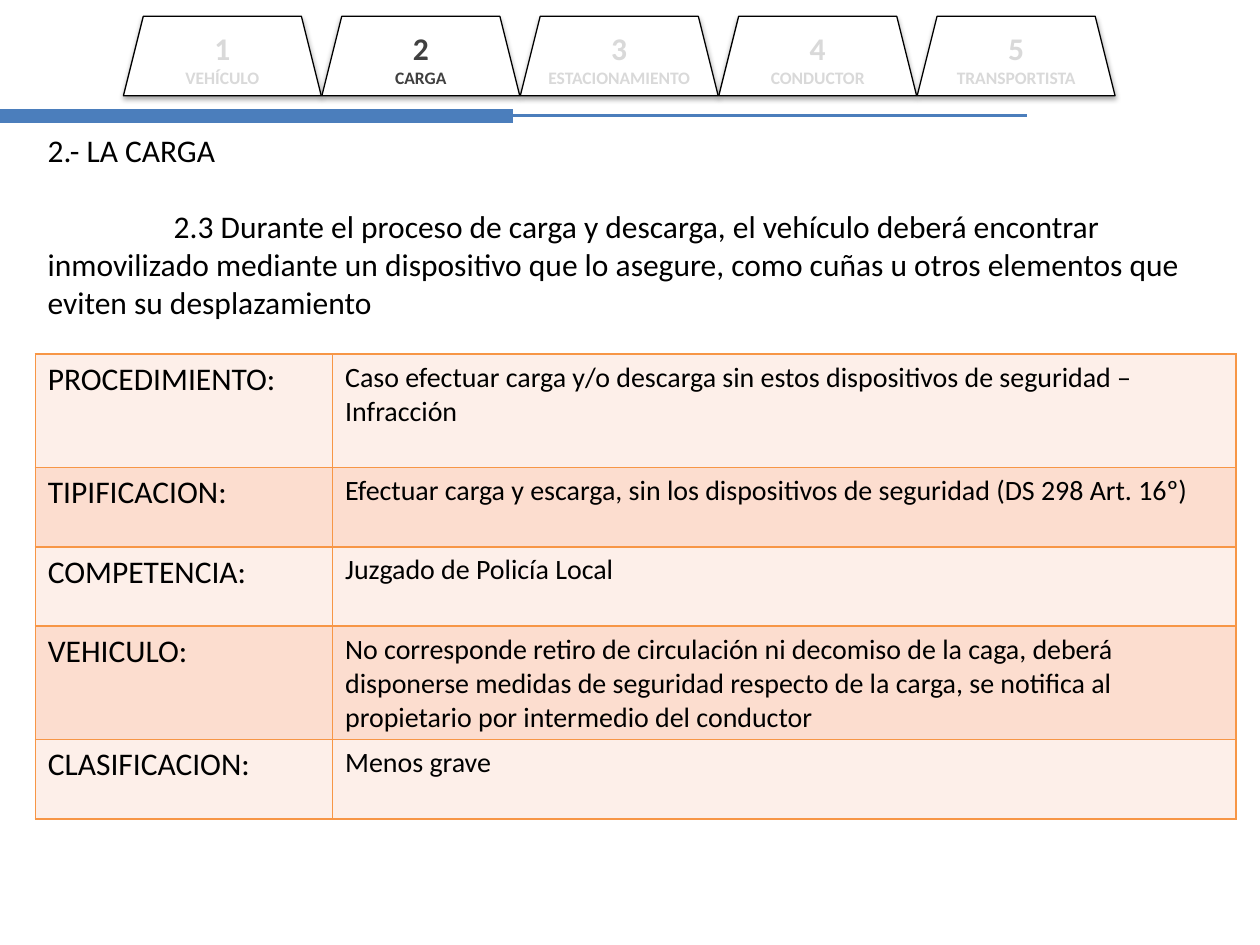
"""Build the slide on load immobilisation, with section tabs and a procedure table."""
from lxml import etree
from pptx import Presentation
from pptx.dml.color import RGBColor
from pptx.enum import shapes, text
from pptx.oxml import parse_xml
from pptx.oxml.ns import nsdecls, qn
from pptx.util import Inches, Pt

COLORS = {
    "black": "000000", "white": "FFFFFF", "blue": "4B7EBC", "orange": "F79646",
    "light": "FDEFE9", "dark": "FCDDCF", "active": "404040", "inactive": "D9D9D9",
}
TABS = ["VEHÍCULO", "CARGA", "ESTACIONAMIENTO", "CONDUCTOR", "TRANSPORTISTA"]
ACTIVE_TAB = 2
ROWS = [
    ("PROCEDIMIENTO:", "Caso efectuar carga y/o descarga sin estos dispositivos de seguridad – Infracción", 0.9),
    ("TIPIFICACION:", "Efectuar carga y escarga, sin los dispositivos de seguridad (DS 298 Art. 16º)", 0.63),
    ("COMPETENCIA:", "Juzgado de Policía Local", 0.63),
    ("VEHICULO:", "No corresponde retiro de circulación ni decomiso de la caga, deberá disponerse "
     "medidas de seguridad respecto de la carga, se notifica al propietario por intermedio "
     "del conductor", 0.9),
    ("CLASIFICACION:", "Menos grave", 0.63),
]


def color(name):
    return RGBColor.from_string(COLORS[name])


def format_runs(paragraph, size, name="black", bold=False):
    for run in paragraph.runs:
        run.font.name = "Calibri"
        run.font.size = Pt(size)
        run.font.bold = bold
        run.font.color.rgb = color(name)


presentation = Presentation()
presentation.slide_width = Inches(10)
presentation.slide_height = Inches(7.5)
slide = presentation.slides.add_slide(presentation.slide_layouts[6])

for end, width in [(8.15, 1.75), (4.07, 8)]:
    line = slide.shapes.add_connector(
        shapes.MSO_CONNECTOR.STRAIGHT, Inches(0), Inches(0.92), Inches(end), Inches(0.92))
    line.line.color.rgb = color("blue")
    line.line.width = Pt(width)
    etree.SubElement(line._element.spPr, qn("a:effectLst"))

heading = slide.shapes.add_textbox(Inches(0.28), Inches(0.99), Inches(9.61), Inches(1.62))
heading.text_frame.word_wrap = True
heading.text_frame.auto_size = text.MSO_AUTO_SIZE.SHAPE_TO_FIT_TEXT
heading.text_frame.text = (
    "2.- LA CARGA\n2.3 Durante el proceso de carga y descarga, el vehículo deberá encontrar "
    "inmovilizado mediante un dispositivo que lo asegure, como cuñas u otros elementos que "
    "eviten su desplazamiento")
for paragraph in heading.text_frame.paragraphs:
    format_runs(paragraph, 18)
requirement = heading.text_frame.paragraphs[1]
requirement.space_before = Pt(22)
requirement._p.get_or_add_pPr().set("indent", str(Inches(1)))

table = slide.shapes.add_table(
    len(ROWS), 2, Inches(0.28), Inches(2.81), Inches(9.53), Inches(3.69)).table
table.columns[0].width = Inches(2.36)
table.columns[1].width = Inches(7.17)
for row_index, (label, detail, height) in enumerate(ROWS):
    table.rows[row_index].height = Inches(height)
    for column_index, (content, size) in enumerate([(label, 18), (detail, 16)]):
        cell = table.cell(row_index, column_index)
        cell.text_frame.text = content
        format_runs(cell.text_frame.paragraphs[0], size)
        cell.fill.solid()
        cell.fill.fore_color.rgb = color("dark" if row_index % 2 else "light")
        properties = cell._tc.get_or_add_tcPr()
        for position, side in enumerate("LRTB"):
            properties.insert(position, parse_xml(
                f'<a:ln{side} {nsdecls("a")} w="{Pt(1)}"><a:solidFill>'
                f'<a:srgbClr val="{COLORS["orange"]}"/></a:solidFill></a:ln{side}>'))

for number, title in enumerate(TABS, start=1):
    left = 0.98 + (number - 1) * 1.575
    tab = slide.shapes.add_shape(
        shapes.MSO_SHAPE.TRAPEZOID, Inches(left), Inches(0.13), Inches(1.57), Inches(0.63))
    tab.fill.solid()
    tab.fill.fore_color.rgb = color("white")
    tab.line.color.rgb = color("black")
    tab.line.width = Pt(0.75)
    tab.shadow.inherit = False
    tab._element.spPr.find(qn("a:effectLst")).append(parse_xml(
        f'<a:outerShdw {nsdecls("a")} blurRad="{Pt(3.1)}" dist="{Pt(1.8)}" dir="5400000" '
        f'rotWithShape="0"><a:srgbClr val="{COLORS["black"]}"><a:alpha val="35000"/>'
        '</a:srgbClr></a:outerShdw>'))
    tab.text_frame.word_wrap = True
    tab.text_frame.vertical_anchor = text.MSO_ANCHOR.MIDDLE
    tab.text_frame.text = f"{number}\n{title}"
    tone = "active" if number == ACTIVE_TAB else "inactive"
    for paragraph, size in zip(tab.text_frame.paragraphs, [18, 10]):
        paragraph.alignment = text.PP_ALIGN.CENTER
        format_runs(paragraph, size, tone, bold=True)

presentation.save("out.pptx")
